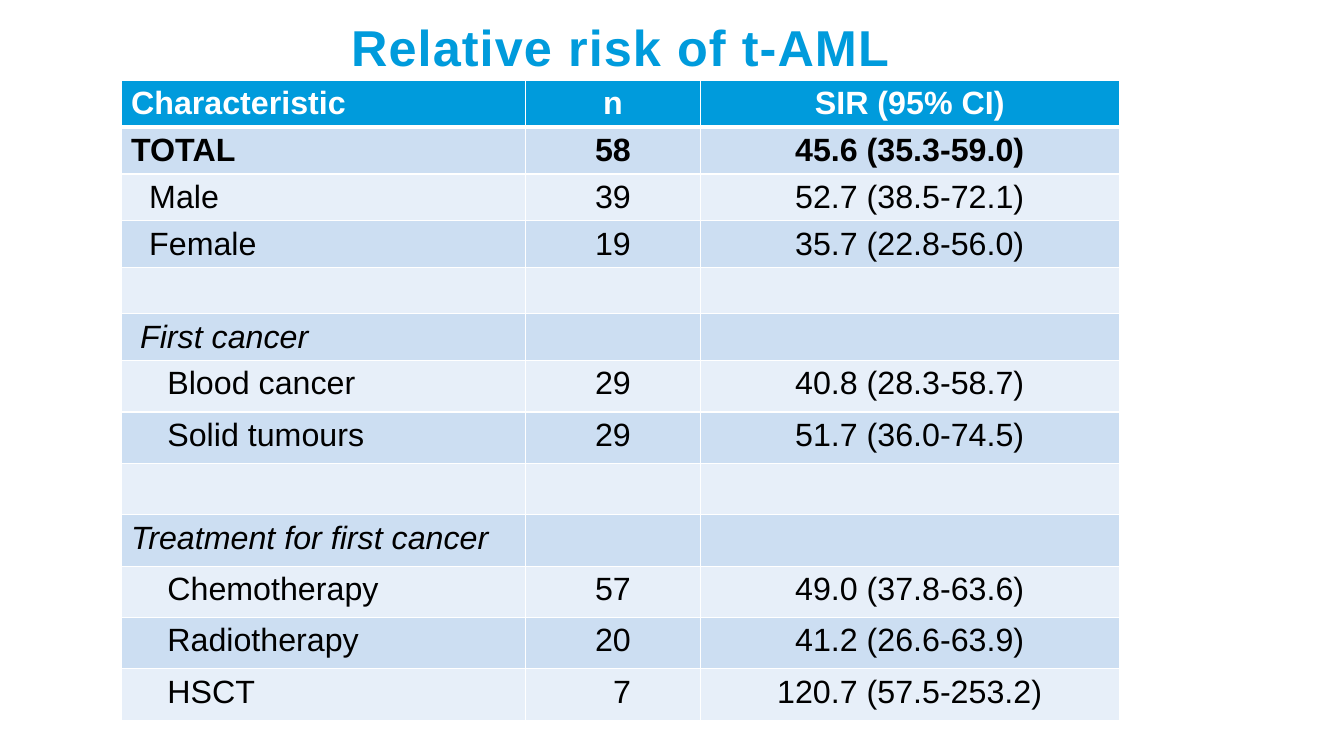
from dataclasses import dataclass

from lxml.etree import SubElement
from pptx import Presentation
from pptx.dml.color import RGBColor
from pptx.enum.text import MSO_ANCHOR, PP_ALIGN
from pptx.oxml.ns import qn
from pptx.slide import Slide
from pptx.table import Table, _Cell
from pptx.text.text import _Paragraph, _Run
from pptx.util import Inches, Pt

BLUE = RGBColor(0x00, 0x9B, 0xDC)
BAND_DARK = RGBColor(0xCC, 0xDE, 0xF2)
BAND_LIGHT = RGBColor(0xE7, 0xEF, 0xF9)
WHITE = RGBColor(0xFF, 0xFF, 0xFF)
BLACK = RGBColor(0x00, 0x00, 0x00)

FONT = "Arial"
CELL_MARGIN = 0.1
INDENT_STEP = 0.09
COLUMN_WIDTHS = (4.01, 1.74, 4.15)
HEADER_HEIGHT, UPPER_HEIGHT, LOWER_HEIGHT = 0.45, 0.46, 0.51
FIRST_LOWER_ROW = 6


@dataclass(frozen=True)
class RiskRow:
    label: str = ""
    count: str = ""
    ratio: str = ""
    indent: int = 0
    count_indent: int = 0
    bold: bool = False
    italic: bool = False


RISK_ROWS = (
    RiskRow("Characteristic", "n", "SIR (95% CI)", bold=True),
    RiskRow("TOTAL", "58", "45.6 (35.3-59.0)", bold=True),
    RiskRow("Male", "39", "52.7 (38.5-72.1)", indent=2),
    RiskRow("Female", "19", "35.7 (22.8-56.0)", indent=2),
    RiskRow(),
    RiskRow("First cancer", indent=1, italic=True),
    RiskRow("Blood cancer", "29", "40.8 (28.3-58.7)", indent=4),
    RiskRow("Solid tumours", "29", "51.7 (36.0-74.5)", indent=4),
    RiskRow(),
    RiskRow("Treatment for first cancer", italic=True),
    RiskRow("Chemotherapy", "57", "49.0 (37.8-63.6)", indent=4),
    RiskRow("Radiotherapy", "20", "41.2 (26.6-63.9)", indent=4),
    RiskRow("HSCT", "7", "120.7 (57.5-253.2)", indent=4, count_indent=2),
)


def add_run(paragraph: _Paragraph, text: str, size: float, color: RGBColor,
            bold: bool = False, italic: bool = False) -> _Run:
    run = paragraph.add_run()
    run.text = text
    run.font.name = FONT
    run.font.size = Pt(size)
    run.font.bold = bold
    run.font.italic = italic
    run.font.color.rgb = color
    return run


def set_borders(cell: _Cell, row_index: int) -> None:
    """White rules, with a heavier one under the header."""
    widths = {
        "L": 1,
        "R": 1,
        "T": 3 if row_index == 1 else 1,
        "B": 3 if row_index == 0 else 1,
    }
    properties = cell._tc.get_or_add_tcPr()
    for side, width in widths.items():
        line = SubElement(properties, qn(f"a:ln{side}"), w=str(Pt(width)))
        fill = SubElement(line, qn("a:solidFill"))
        SubElement(fill, qn("a:srgbClr"), val=str(WHITE))


def fill_row(table: Table, row_index: int, row: RiskRow) -> None:
    is_header = row_index == 0
    band = BLUE if is_header else BAND_DARK if row_index % 2 else BAND_LIGHT
    texts = (row.label, row.count, row.ratio)
    indents = (row.indent, row.count_indent, 0)
    for column, (text, indent) in enumerate(zip(texts, indents)):
        cell = table.cell(row_index, column)
        set_borders(cell, row_index)
        cell.fill.solid()
        cell.fill.fore_color.rgb = band
        cell.margin_left = Inches(CELL_MARGIN + INDENT_STEP * indent)
        cell.margin_right = Inches(CELL_MARGIN)
        cell.margin_top = Inches(0.05)
        cell.margin_bottom = Inches(0.03)
        if text:
            paragraph = cell.text_frame.paragraphs[0]
            paragraph.alignment = PP_ALIGN.CENTER if column else PP_ALIGN.LEFT
            add_run(paragraph, text, 23, WHITE if is_header else BLACK,
                    row.bold, row.italic)


def add_title(slide: Slide) -> None:
    title = slide.shapes.add_textbox(
        Inches(0.78), Inches(0.2), Inches(10.75), Inches(0.59))
    frame = title.text_frame
    frame.word_wrap = True
    frame.vertical_anchor = MSO_ANCHOR.BOTTOM
    frame.margin_top = 0
    frame.margin_bottom = Inches(0.03)
    paragraph = frame.paragraphs[0]
    paragraph.alignment = PP_ALIGN.CENTER
    paragraph.line_spacing = 0.8
    run = add_run(paragraph, "Relative risk of t-AML", 36, BLUE, bold=True)
    run.font._element.set("spc", "80")


def add_risk_table(slide: Slide) -> None:
    heights = [
        HEADER_HEIGHT if index == 0
        else UPPER_HEIGHT if index < FIRST_LOWER_ROW
        else LOWER_HEIGHT
        for index in range(len(RISK_ROWS))
    ]
    table = slide.shapes.add_table(
        len(RISK_ROWS), len(COLUMN_WIDTHS), Inches(1.2), Inches(0.8),
        Inches(sum(COLUMN_WIDTHS)), Inches(sum(heights))).table
    for column, width in zip(table.columns, COLUMN_WIDTHS):
        column.width = Inches(width)
    for index, (row, height) in enumerate(zip(RISK_ROWS, heights)):
        table.rows[index].height = Inches(height)
        fill_row(table, index, row)


def main() -> None:
    presentation = Presentation()
    presentation.slide_width = Inches(13.33)
    presentation.slide_height = Inches(7.5)
    slide = presentation.slides.add_slide(presentation.slide_layouts[6])
    # Heading
    add_title(slide)
    # Risk by characteristic
    add_risk_table(slide)
    presentation.save("out.pptx")


if __name__ == "__main__":
    main()
